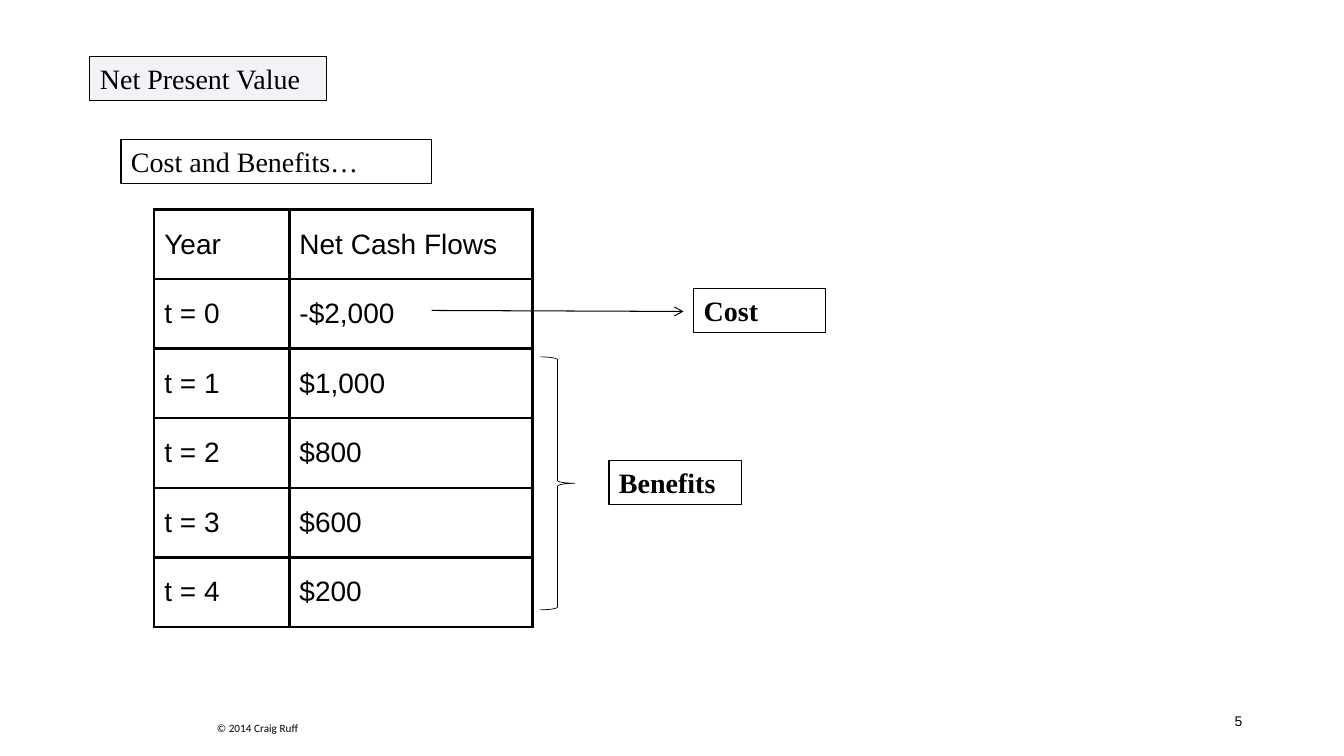
from dataclasses import dataclass

from lxml import etree
from pptx import Presentation
from pptx import util as u
from pptx.dml.color import RGBColor
from pptx.enum import shapes, text
from pptx.oxml import ns

COLORS = {"ink": "000000", "title": "002060"}
SERIF = "Times New Roman"


@dataclass
class Label:
    wording: str
    left: float
    top: float
    width: float
    height: float = 0.44
    font: str = SERIF
    size: int = 20
    bold: bool = False
    framed: bool = True
    align: text.PP_ALIGN = text.PP_ALIGN.LEFT
    anchor: text.MSO_ANCHOR = text.MSO_ANCHOR.TOP


TITLE = Label("Net Present Value", 0.89, 0.56, 2.35)
LABELS = [
    Label("Cost and Benefits…", 1.2, 1.38, 3.08),
    Label("Cost", 6.88, 2.86, 1.31, bold=True),
    Label("Benefits", 6.04, 4.57, 1.31, bold=True),
    Label("5", 9.42, 6.95, 3, 0.4, "Arial", 10, framed=False,
          align=text.PP_ALIGN.RIGHT, anchor=text.MSO_ANCHOR.MIDDLE),
    Label("© 2014 Craig Ruff", 1.95, 7.11, 1.21, 0.24, "Calibri", 8,
          framed=False, align=text.PP_ALIGN.CENTER),
]
CASH_FLOWS = ["-$2,000", "$1,000", "$800", "$600", "$200"]
ROWS = [("Year", "Net Cash Flows")] + [
    (f"t = {year}", flow) for year, flow in enumerate(CASH_FLOWS)
]
COLUMN_WIDTHS = [1.34, 2.41]
ROW_HEIGHT = 0.69


def color(name: str) -> RGBColor:
    return RGBColor.from_string(COLORS[name])


def style_line(line, width: float) -> None:
    line.color.rgb = color("ink")
    line.width = u.Pt(width)


def style_font(paragraph, name: str, size: int, bold: bool = False) -> None:
    font = paragraph.font
    font.name, font.size, font.bold = name, u.Pt(size), bold
    font.color.rgb = color("ink")


def format_label(shape, label: Label) -> None:
    shape.left, shape.top = u.Inches(label.left), u.Inches(label.top)
    shape.width, shape.height = u.Inches(label.width), u.Inches(label.height)
    if label.framed:
        style_line(shape.line, 0.75)
    frame = shape.text_frame
    frame.text = label.wording
    frame.word_wrap = True
    frame.auto_size = text.MSO_AUTO_SIZE.NONE
    frame.vertical_anchor = label.anchor
    frame.margin_left = frame.margin_right = u.Inches(0.1)
    frame.margin_top = frame.margin_bottom = u.Inches(0.05)
    paragraph = frame.paragraphs[0]
    paragraph.alignment = label.align
    paragraph.line_spacing = 1.0
    paragraph.space_before = u.Pt(0)
    style_font(paragraph, label.font, label.size, label.bold)


def add_borders(cell, width: float) -> None:
    properties = cell._tc.get_or_add_tcPr()
    for index, side in enumerate(("lnL", "lnR", "lnT", "lnB")):
        border = etree.Element(ns.qn(f"a:{side}"), w=str(u.Pt(width)))
        fill = etree.SubElement(border, ns.qn("a:solidFill"))
        etree.SubElement(fill, ns.qn("a:srgbClr"), val=COLORS["ink"])
        properties.insert(index, border)


def add_cash_flow_table(slide) -> None:
    table = slide.shapes.add_table(
        len(ROWS), len(COLUMN_WIDTHS), u.Inches(1.53), u.Inches(2.08),
        u.Inches(sum(COLUMN_WIDTHS)), u.Inches(ROW_HEIGHT * len(ROWS))).table
    table.first_row = table.horz_banding = False
    for column, width in zip(table.columns, COLUMN_WIDTHS):
        column.width = u.Inches(width)
    for row, values in zip(table.rows, ROWS):
        row.height = u.Inches(ROW_HEIGHT)
        for cell, value in zip(row.cells, values):
            cell.text = value
            cell.vertical_anchor = text.MSO_ANCHOR.MIDDLE
            cell.fill.background()
            add_borders(cell, 2)
            paragraph = cell.text_frame.paragraphs[0]
            style_font(paragraph, "Arial", 20)
            indent = u.Inches(0.51)
            properties = paragraph._p.get_or_add_pPr()
            properties.set("marL", str(indent))
            properties.set("indent", str(-indent))


def add_cost_arrow(slide) -> None:
    arrow = slide.shapes.add_connector(
        shapes.MSO_CONNECTOR.STRAIGHT,
        u.Inches(4.28), u.Inches(3.08), u.Inches(6.78), u.Inches(3.09))
    style_line(arrow.line, 0.75)
    etree.SubElement(arrow.line._get_or_add_ln(), ns.qn("a:tailEnd"), type="arrow")
    etree.SubElement(arrow._element.spPr, ns.qn("a:effectLst"))


def add_benefits_brace(slide) -> None:
    brace = slide.shapes.add_shape(
        shapes.MSO_SHAPE.RIGHT_BRACE,
        u.Inches(5.36), u.Inches(3.54), u.Inches(0.34), u.Inches(2.51))
    brace.shadow.inherit = False
    brace.fill.background()
    style_line(brace.line, 0.5)


def main() -> None:
    presentation = Presentation()
    presentation.slide_width = u.Inches(13.33)
    presentation.slide_height = u.Inches(7.5)
    slide = presentation.slides.add_slide(presentation.slide_layouts[5])

    # Title with a faint tint
    title = slide.shapes.title
    format_label(title, TITLE)
    title.fill.solid()
    title.fill.fore_color.rgb = color("title")
    tint = title._element.spPr.find(".//" + ns.qn("a:srgbClr"))
    etree.SubElement(tint, ns.qn("a:alpha"), val="5000")

    # Cash flows and their markers
    add_cash_flow_table(slide)
    add_cost_arrow(slide)
    add_benefits_brace(slide)

    # Labels, page number and footer
    for label in LABELS:
        format_label(slide.shapes.add_textbox(0, 0, 0, 0), label)

    presentation.save("out.pptx")


if __name__ == "__main__":
    main()
